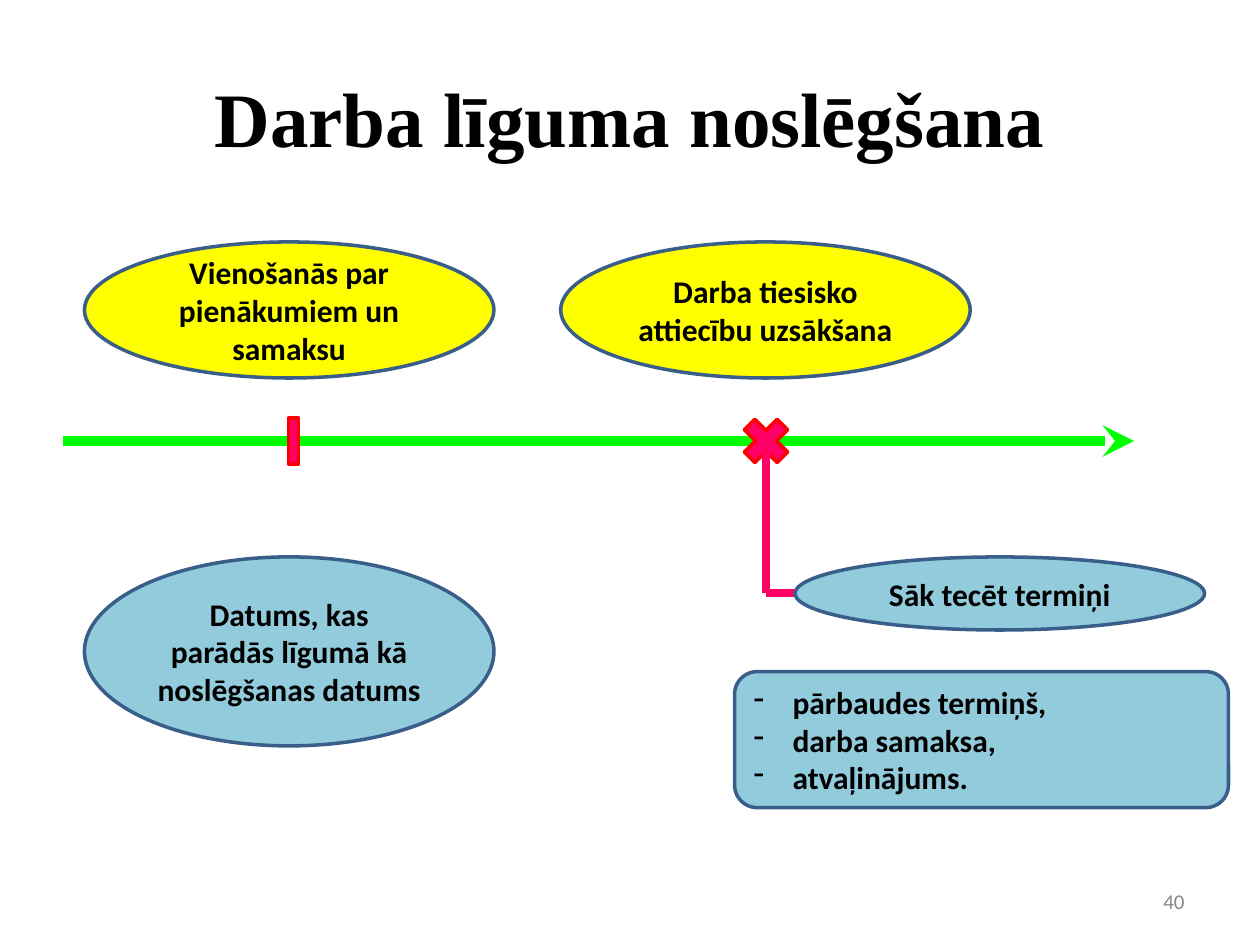
from lxml import etree
from pptx import Presentation
from pptx.dml.color import RGBColor
from pptx.enum.shapes import MSO_CONNECTOR, MSO_SHAPE
from pptx.enum.text import MSO_ANCHOR, PP_ALIGN
from pptx.oxml.ns import qn
from pptx.util import Inches, Pt

STRAIGHT = MSO_CONNECTOR.STRAIGHT
OVAL = MSO_SHAPE.OVAL
ROUNDED = MSO_SHAPE.ROUNDED_RECTANGLE
CROSS = MSO_SHAPE.MATH_MULTIPLY
BAR = MSO_SHAPE.MATH_MINUS
MIDDLE = MSO_ANCHOR.MIDDLE
LEFT, CENTER, RIGHT, JUSTIFY = (
    PP_ALIGN.LEFT, PP_ALIGN.CENTER, PP_ALIGN.RIGHT, PP_ALIGN.JUSTIFY)

WIDTH, HEIGHT = 10, 7.5
YELLOW, BLUE, OUTLINE = "FFFF00", "92CCDC", "395E89"
GREEN, PINK, RED = "00FF00", "FF0066", "FF0000"
BLACK, GREY = "000000", "888888"

# Grid: two event columns, the timeline row and the rows of ovals
FIRST_COLUMN, SECOND_COLUMN, TERM_COLUMN = 0.67, 4.45, 6.31
EVENT_ROW, TIMELINE, DETAIL_ROW, LIST_ROW = 1.92, 3.5, 4.42, 5.33
OVAL_WIDTH, OVAL_HEIGHT = 3.25, 1.08
MARK_SIZE = 0.5
START_X = 6.08
TERM_HEIGHT = 0.58


def color(value):
    return RGBColor.from_string(value)


def place(shape, left, top, width, height):
    shape.left, shape.top = Inches(left), Inches(top)
    shape.width, shape.height = Inches(width), Inches(height)


def write(shape, text, size=18, font="Calibri", fill=BLACK, bold=True,
          align=CENTER, bullet=None):
    """Write one paragraph per line of text."""
    frame = shape.text_frame
    frame.word_wrap = True
    frame.vertical_anchor = MIDDLE
    for index, line in enumerate(text.split("\n")):
        paragraph = frame.add_paragraph() if index else frame.paragraphs[0]
        paragraph.alignment = align
        run = paragraph.add_run()
        run.text = line
        run.font.name = font
        run.font.size = Pt(size)
        run.font.bold = bold
        run.font.color.rgb = color(fill)
        if bullet:
            add_bullet(paragraph, bullet)


def add_bullet(paragraph, character, indent=0.31):
    properties = paragraph._p.get_or_add_pPr()
    properties.set("marL", str(Inches(indent)))
    properties.set("indent", str(-Inches(indent)))
    etree.SubElement(properties, qn("a:buChar")).set("char", character)


def add_shape(slide, kind, left, top, width, height, fill, line=OUTLINE):
    shape = slide.shapes.add_shape(kind, 0, 0, 0, 0)
    place(shape, left, top, width, height)
    shape.shadow.inherit = False
    shape.fill.solid()
    shape.fill.fore_color.rgb = color(fill)
    shape.line.color.rgb = color(line)
    shape.line.width = Pt(2)
    return shape


def add_oval(slide, text, left, top, fill, height=OVAL_HEIGHT):
    oval = add_shape(slide, OVAL, left, top, OVAL_WIDTH, height, fill)
    write(oval, text)


def add_mark(slide, kind, center, height, rotation=0):
    """Put a mark centred on the timeline."""
    mark = add_shape(slide, kind, center - MARK_SIZE / 2, TIMELINE - height / 2,
                     MARK_SIZE, height, PINK, RED)
    mark.rotation = rotation


def add_line(slide, start, end, stroke, width, arrow=None):
    line = slide.shapes.add_connector(
        STRAIGHT, *(Inches(value) for value in (*start, *end)))
    line.line.color.rgb = color(stroke)
    line.line.width = Pt(width)
    if arrow:
        tail = etree.SubElement(line.line._get_or_add_ln(), qn("a:tailEnd"))
        tail.set("type", arrow)
    etree.SubElement(line._element.spPr, qn("a:effectLst"))


def main():
    presentation = Presentation()
    presentation.slide_width = Inches(WIDTH)
    presentation.slide_height = Inches(HEIGHT)
    slide = presentation.slides.add_slide(presentation.slide_layouts[5])

    # Title
    title = slide.shapes.title
    place(title, 0.05 * WIDTH, 0.04 * HEIGHT, 0.9 * WIDTH, 1.25)
    write(title, "Darba līguma noslēgšana", size=44, font="Times New Roman")

    # Timeline with its two marks
    add_line(slide, (0.5, TIMELINE), (9, TIMELINE), GREEN, 6, arrow="stealth")
    add_mark(slide, CROSS, START_X, MARK_SIZE)
    add_mark(slide, BAR, 2.33, 0.33, rotation=270)

    # Events above the timeline, and the date below it
    add_oval(slide, "Vienošanās par pienākumiem un samaksu",
             FIRST_COLUMN, EVENT_ROW, YELLOW)
    add_oval(slide, "Darba tiesisko attiecību uzsākšana",
             SECOND_COLUMN, EVENT_ROW, YELLOW)
    add_oval(slide, "Datums, kas parādās līgumā kā noslēgšanas datums",
             FIRST_COLUMN, DETAIL_ROW, BLUE, height=1.5)

    # Bent line from the start of work to the terms
    corner = (START_X, DETAIL_ROW + TERM_HEIGHT / 2)
    add_line(slide, (START_X, 3.58), corner, PINK, 4.5)
    add_line(slide, corner, (6.5, corner[1]), PINK, 4.5)
    add_oval(slide, "Sāk tecēt termiņi", TERM_COLUMN, DETAIL_ROW, BLUE,
             height=TERM_HEIGHT)

    # List of terms
    terms = add_shape(slide, ROUNDED, 5.83, LIST_ROW, 3.92, OVAL_HEIGHT, BLUE)
    write(terms, "pārbaudes termiņš,\ndarba samaksa,\natvaļinājums.",
          align=JUSTIFY, bullet="-")

    # Slide number
    number = slide.shapes.add_textbox(0, 0, 0, 0)
    place(number, 7.17, 6.95, 2.33, 0.4)
    write(number, "40", size=12, fill=GREY, bold=False, align=RIGHT)

    presentation.save("out.pptx")


if __name__ == "__main__":
    main()
